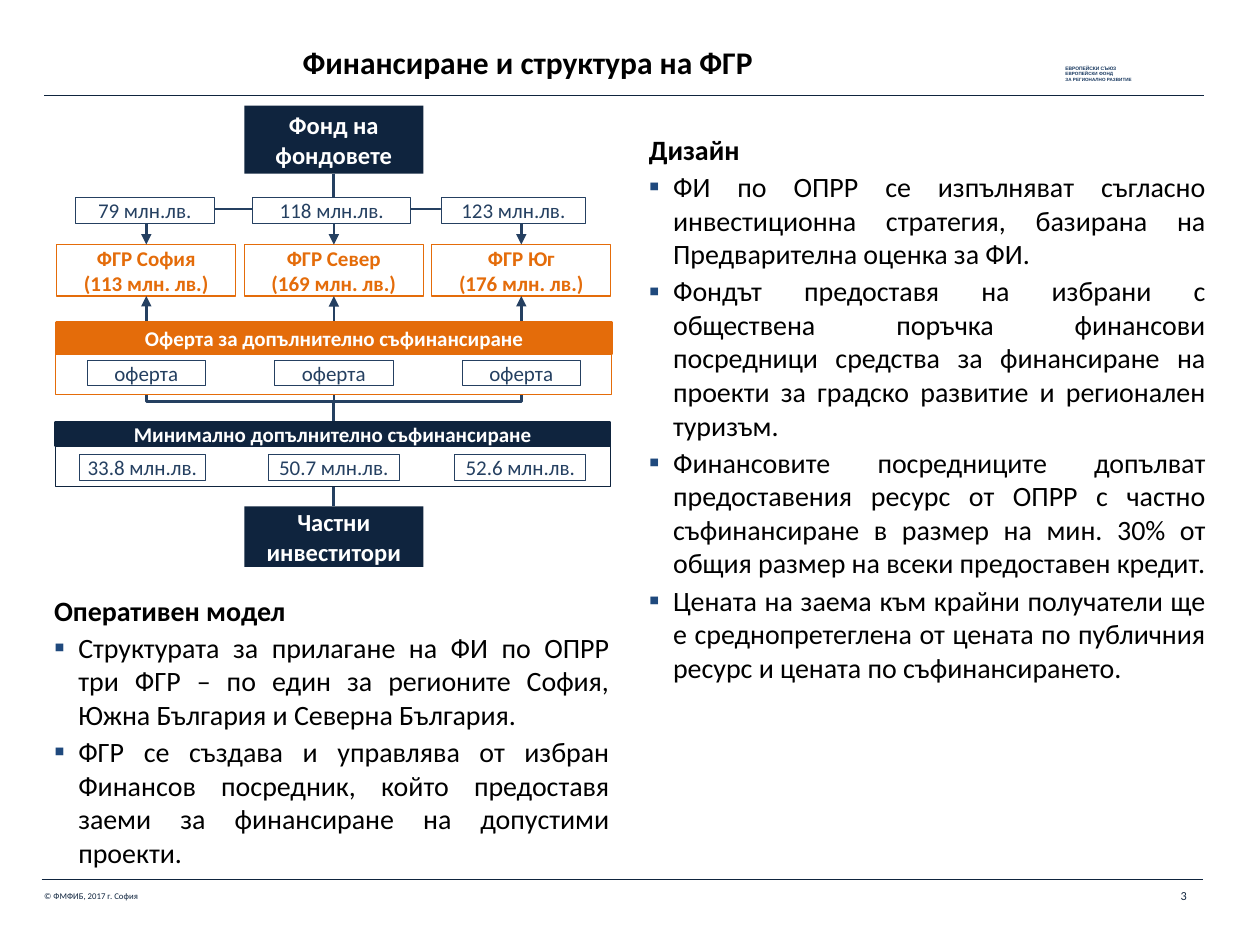
from lxml.etree import SubElement
from pptx import Presentation
from pptx.dml.color import RGBColor
from pptx.enum.shapes import MSO_CONNECTOR, MSO_SHAPE
from pptx.enum.text import MSO_ANCHOR, PP_ALIGN
from pptx.oxml.ns import qn
from pptx.util import Cm, Pt

NAVY, STEEL, ORANGE = "0F243E", "254061", "E46C0A"
WHITE, BLACK, BULLET = "FFFFFF", "000000", "1F497D"
FIRST_CENTRE, COLUMN_STEP = 2.95, 3.78
CENTRES = [FIRST_CENTRE + COLUMN_STEP * column for column in range(3)]
BOX_WIDTH = 3.61

FUNDS = ["ФГР София\n(113 млн. лв.)", "ФГР Север\n(169 млн. лв.)", "ФГР Юг\n(176 млн. лв.)"]
# Each label: text, centre, width
GRANTS = [("79 млн.лв.", 2.92, 2.79), ("118 млн.лв.", 6.69, 3.18), ("123 млн.лв.", 10.35, 2.92)]
OFFERS = [("оферта", centre, 2.39) for centre in CENTRES]
MINIMUMS = [("33.8 млн.лв.", 2.87, 2.54), ("50.7 млн.лв.", 6.73, 2.64), ("52.6 млн.лв.", 10.49, 2.64)]

MODEL = [
    "Структурата за прилагане на ФИ по ОПРР три ФГР – по един за регионите София, "
    "Южна България и Северна България.",
    "ФГР се създава и управлява от избран Финансов посредник, който предоставя заеми "
    "за финансиране на допустими проекти.",
]
DESIGN = [
    "ФИ по ОПРР се изпълняват съгласно инвестиционна стратегия, базирана на "
    "Предварителна оценка за ФИ.",
    "Фондът предоставя на избрани с обществена поръчка финансови посредници средства "
    "за финансиране на проекти за градско развитие и регионален туризъм.",
    "Финансовите посредниците допълват предоставения ресурс от ОПРР с частно "
    "съфинансиране в размер на мин. 30% от общия размер на всеки предоставен кредит.",
    "Цената на заема към крайни получатели ще е среднопретеглена от цената по "
    "публичния ресурс и цената по съфинансирането.",
]


def color(value):
    return RGBColor.from_string(value)


def write(paragraph, text, size, fill, bold=False, name="Calibri"):
    paragraph.text = text
    for span in paragraph.runs:
        for key, value in {"size": Pt(size), "bold": bold, "name": name}.items():
            setattr(span.font, key, value)
        span.font.color.rgb = color(fill)


def set_frame(frame, **values):
    margins = dict.fromkeys(("margin_left", "margin_top", "margin_right", "margin_bottom"), 0)
    for key, value in {"word_wrap": True, **margins, **values}.items():
        setattr(frame, key, value)


def add_text(page, place, lines, size, fill, bold=False, name="Calibri", **frame_values):
    box = page.shapes.add_textbox(*map(Cm, place))
    set_frame(box.text_frame, **frame_values)
    for number, line in enumerate(lines):
        para = box.text_frame.add_paragraph() if number else box.text_frame.paragraphs[0]
        write(para, line, size, fill, bold, name)
    return box


def add_bullet(para):
    properties = para._p.get_or_add_pPr()
    properties.set("marL", str(Cm(0.49)))
    properties.set("indent", str(-Cm(0.49)))
    tint = SubElement(properties, qn("a:buClr"))
    SubElement(tint, qn("a:srgbClr"), val=BULLET)
    SubElement(properties, qn("a:buSzPct"), val="110000")
    SubElement(properties, qn("a:buFont"), typeface="Arial")
    SubElement(properties, qn("a:buChar"), char="▪")


def add_section(page, place, heading, points):
    box = add_text(page, place, [heading, *points], 16, BLACK)
    for number, para in enumerate(box.text_frame.paragraphs):
        para.alignment = PP_ALIGN.JUSTIFY
        para.space_after = Pt(2)
        if number:
            add_bullet(para)
        else:
            para.runs[0].font.bold = True


def add_box(page, place, text="", size=12, ink=STEEL, bold=False, fill=None, line=None, weight=0.5):
    box = page.shapes.add_shape(MSO_SHAPE.RECTANGLE, *map(Cm, place))
    box.shadow.inherit = False
    if fill:
        box.fill.solid()
        box.fill.fore_color.rgb = color(fill)
    else:
        box.fill.background()
    if line:
        box.line.color.rgb = color(line)
        box.line.width = Pt(weight)
    else:
        box.line.fill.background()
    set_frame(box.text_frame, vertical_anchor=MSO_ANCHOR.MIDDLE)
    if text:
        para = box.text_frame.paragraphs[0]
        para.alignment = PP_ALIGN.CENTER
        write(para, text, size, ink, bold)
    return box


def add_labels(page, labels, top):
    for text, centre, width in labels:
        add_box(page, (centre - width / 2, top, width, 0.51), text, fill=WHITE, line=STEEL)


def add_line(page, kind, ends, line, weight):
    connector = page.shapes.add_connector(kind, *ends)
    connector.line.color.rgb = color(line)
    connector.line.width = Pt(weight)
    SubElement(connector._element.spPr, qn("a:effectLst"))
    return connector


def turn_upright(connector, start_x, start_y, end_x, end_y):
    """Rotate an elbow so that it leaves and arrives vertically."""
    right, up = end_x > start_x, end_y < start_y
    across, along = abs(end_x - start_x), abs(end_y - start_y)
    place = {
        "left": (start_x + end_x - along) // 2,
        "top": (start_y + end_y - across) // 2,
        "width": along,
        "height": across,
    }
    for key, value in place.items():
        setattr(connector, key, value)
    turn = {"rot": 5400000 if right == up else 16200000, "flipH": int(right), "flipV": int(up)}
    for key, value in turn.items():
        connector._element.spPr.find(qn("a:xfrm")).set(key, str(value))


def add_arrow(page, source, target, source_side, target_side):
    def side_middle(box, side):
        return box.left + box.width // 2, box.top + (box.height if side == 2 else 0)

    ends = *side_middle(source, source_side), *side_middle(target, target_side)
    straight = abs(ends[0] - ends[2]) < Cm(0.02)
    kind = MSO_CONNECTOR.STRAIGHT if straight else MSO_CONNECTOR.ELBOW
    arrow = add_line(page, kind, ends, STEEL, 1.5)
    arrow.begin_connect(source, source_side)
    arrow.end_connect(target, target_side)
    if not straight:
        turn_upright(arrow, *ends)
    SubElement(arrow.line._get_or_add_ln(), qn("a:tailEnd"), type="triangle")


def add_page_furniture(page):
    for left, right, height in ((0.89, 24.28, 1.93), (0.84, 24.26, 17.73)):
        ends = map(Cm, (left, height, right, height))
        add_line(page, MSO_CONNECTOR.STRAIGHT, ends, NAVY, 0.75)
    inset = {"margin_left": Cm(0.25), "margin_top": Cm(0.13)}
    union = ["ЕВРОПЕЙСКИ СЪЮЗ", "ЕВРОПЕЙСКИ ФОНД", "ЗА РЕГИОНАЛНО РАЗВИТИЕ"]
    box = add_text(page, (21.23, 1.19, 1.91, 0.61), union, 2.6, "17375E", True, "Arial",
                   **{**inset, "word_wrap": False})
    box.text_frame.paragraphs[0].runs[0].font.size = Pt(2.8)
    add_text(page, (0.89, 17.96, 2.64, 0.36), ["© ФМФИБ, 2017 г. София"], 5, NAVY)
    add_text(page, (6.1, 0.86, 12.6, 0.76), ["Финансиране и структура на ФГР"], 18, BLACK, True)
    add_text(page, (23.55, 17.78, 0.99, 0.76), ["3"], 7, NAVY, **inset)


def add_structure(page):
    middle = CENTRES[1] - BOX_WIDTH / 2
    parent, investors = [
        add_box(page, (middle, top, BOX_WIDTH, height), text, 14, WHITE, True, NAVY)
        for text, top, height in (("Фонд на фондовете", 2.13, 1.37), ("Частни инвеститори", 10.21, 1.22))
    ]
    for text, centre in zip(FUNDS, CENTRES):
        fund = add_box(page, (centre - BOX_WIDTH / 2, 4.93, BOX_WIDTH, 1.04), text,
                       ink=ORANGE, bold=True, line=ORANGE, weight=0.75)
        add_arrow(page, parent, fund, 2, 0)
        add_arrow(page, investors, fund, 0, 2)
    add_labels(page, GRANTS, 3.99)

    add_box(page, (1.12, 6.78, 11.2, 1.17), fill=WHITE, line=ORANGE)
    add_box(page, (1.14, 6.5, 11.2, 0.64), "Оферта за допълнително съфинансиране",
            ink=WHITE, bold=True, fill=ORANGE, line=ORANGE, weight=1.5)
    add_labels(page, OFFERS, 7.26)

    add_box(page, (1.12, 8.99, 11.18, 0.81), fill=WHITE, line=NAVY)
    add_box(page, (1.12, 8.51, 11.18, 0.48), "Минимално допълнително съфинансиране",
            ink=WHITE, bold=True, fill=NAVY, line=NAVY, weight=1.5)
    add_labels(page, MINIMUMS, 9.17)


def main():
    deck = Presentation()
    deck.slide_width, deck.slide_height = Cm(25.4), Cm(19.05)
    page = deck.slides.add_slide(deck.slide_layouts[6])
    add_page_furniture(page)
    add_structure(page)
    add_section(page, (13.08, 2.67, 11.23, 12.45), "Дизайн", DESIGN)
    add_section(page, (1.09, 11.96, 11.2, 5.61), "Оперативен модел", MODEL)
    deck.save("out.pptx")


if __name__ == "__main__":
    main()
